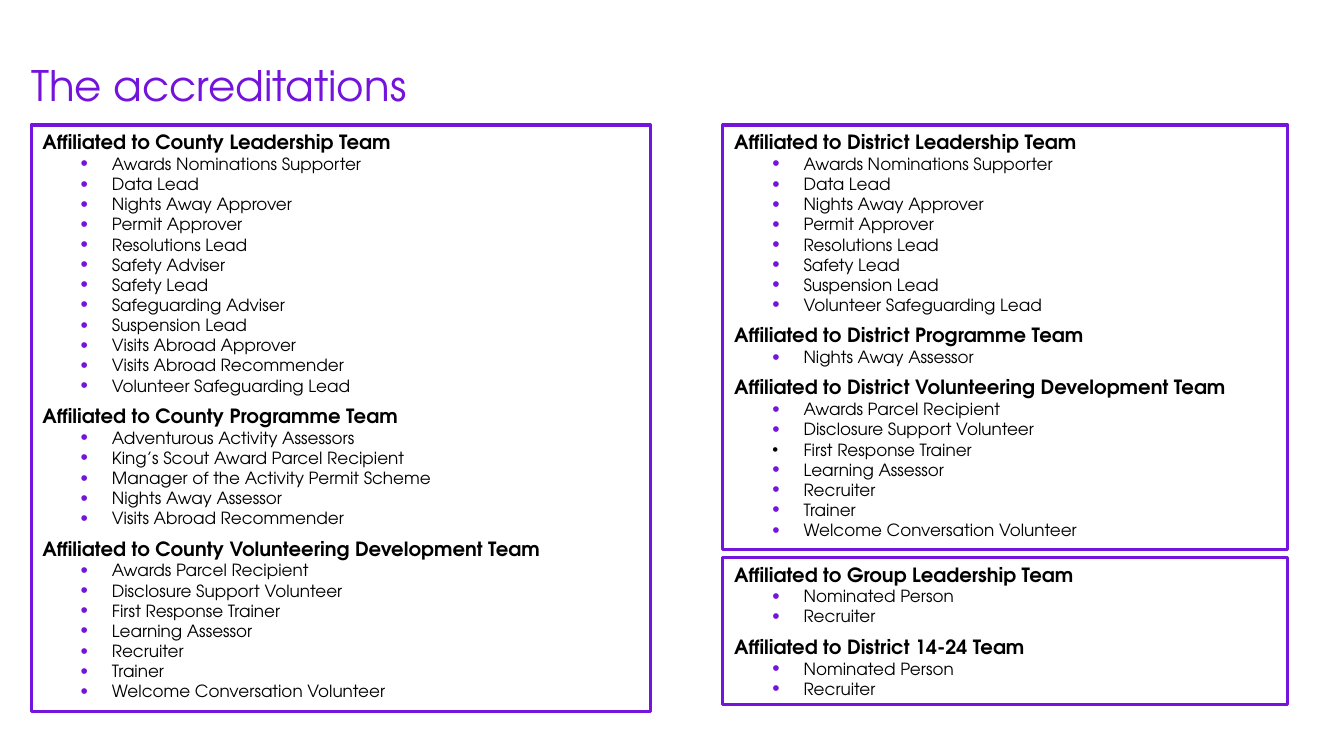
from dataclasses import dataclass

from lxml.etree import SubElement
from pptx import Presentation
from pptx.dml.color import RGBColor
from pptx.enum.text import MSO_ANCHOR, MSO_AUTO_SIZE, PP_ALIGN
from pptx.oxml.ns import qn
from pptx.util import Inches, Pt


@dataclass(frozen=True)
class Theme:
    font: str = "TeX Gyre Adventor"
    title_color: str = "7413DC"
    accent: str = "7414DC"
    text: str = "000000"
    title_size: float = 30
    team_size: float = 14
    role_size: float = 12
    border: float = 2.25
    team_gap: float = 6
    bullet_percent: int = 125


THEME = Theme()
TITLE = "The accreditations"

VOLUNTEERING_ROLES = [
    "Awards Parcel Recipient",
    "Disclosure Support Volunteer",
    "First Response Trainer",
    "Learning Assessor",
    "Recruiter",
    "Trainer",
    "Welcome Conversation Volunteer",
]
GROUP_ROLES = ["Nominated Person", "Recruiter"]

COUNTY = {
    "Affiliated to County Leadership Team": [
        "Awards Nominations Supporter",
        "Data Lead",
        "Nights Away Approver",
        "Permit Approver",
        "Resolutions Lead",
        "Safety Adviser",
        "Safety Lead",
        "Safeguarding Adviser",
        "Suspension Lead",
        "Visits Abroad Approver",
        "Visits Abroad Recommender",
        "Volunteer Safeguarding Lead",
    ],
    "Affiliated to County Programme Team": [
        "Adventurous Activity Assessors",
        "King’s Scout Award Parcel Recipient",
        "Manager of the Activity Permit Scheme",
        "Nights Away Assessor",
        "Visits Abroad Recommender",
    ],
    "Affiliated to County Volunteering Development Team": VOLUNTEERING_ROLES,
}
DISTRICT = {
    "Affiliated to District Leadership Team": [
        "Awards Nominations Supporter",
        "Data Lead",
        "Nights Away Approver",
        "Permit Approver",
        "Resolutions Lead",
        "Safety Lead",
        "Suspension Lead",
        "Volunteer Safeguarding Lead",
    ],
    "Affiliated to District Programme Team": ["Nights Away Assessor"],
    "Affiliated to District Volunteering Development Team": VOLUNTEERING_ROLES,
}
GROUP = {
    "Affiliated to Group Leadership Team": GROUP_ROLES,
    "Affiliated to District 14-24 Team": GROUP_ROLES,
}

LEFT, RIGHT, TOP = 0.31, 7.17, 1.24
PANELS = [
    (COUNTY, (LEFT, TOP, 6.14, 5.82), ()),
    (DISTRICT, (RIGHT, TOP, 5.6, 4.21), ("First Response Trainer",)),
    (GROUP, (RIGHT, 5.53, 5.6, 1.46), ()),
]


def place(box, bounds):
    box.left, box.top, box.width, box.height = map(Inches, bounds)
    frame = box.text_frame
    frame.word_wrap = True
    frame.auto_size = MSO_AUTO_SIZE.NONE
    frame.vertical_anchor = MSO_ANCHOR.TOP
    return frame


def style(paragraph, size, color, bold=False, space_before=0):
    paragraph.alignment = PP_ALIGN.LEFT
    paragraph.space_before = Pt(space_before)
    paragraph.font.name = THEME.font
    paragraph.font.size = Pt(size)
    paragraph.font.bold = bold
    paragraph.font.color.rgb = RGBColor.from_string(color)


def indent(paragraph, margin, first_line):
    properties = paragraph._p.get_or_add_pPr()
    properties.set("marL", str(Inches(margin)))
    properties.set("indent", str(Inches(first_line)))
    return properties


def add_team(paragraph, team, space_before):
    paragraph.text = team
    SubElement(indent(paragraph, 0.01, 0), qn("a:buNone"))
    style(paragraph, THEME.team_size, THEME.text, True, space_before)


def add_role(paragraph, role, plain_bullet):
    paragraph.text = role
    paragraph.level = 1
    properties = indent(paragraph, 0.7, -0.31)
    if not plain_bullet:
        color = SubElement(properties, qn("a:buClr"))
        SubElement(color, qn("a:srgbClr"), val=THEME.accent)
        SubElement(properties, qn("a:buSzPct"), val=str(THEME.bullet_percent * 1000))
    SubElement(properties, qn("a:buFont"), typeface="Arial")
    SubElement(properties, qn("a:buChar"), char="•")
    style(paragraph, THEME.role_size, THEME.text)


def fill_panel(panel, teams, bounds, plain_bullets):
    frame = place(panel, bounds)
    panel.line.color.rgb = RGBColor.from_string(THEME.accent)
    panel.line.width = Pt(THEME.border)
    for position, (team, roles) in enumerate(teams.items()):
        heading = frame.add_paragraph() if position else frame.paragraphs[0]
        add_team(heading, team, THEME.team_gap if position else 0)
        for role in roles:
            add_role(frame.add_paragraph(), role, role in plain_bullets)


def main():
    presentation = Presentation()
    presentation.slide_width = Inches(13.33)
    presentation.slide_height = Inches(7.5)
    comparison = presentation.slide_layouts.get_by_name("Comparison")
    slide = presentation.slides.add_slide(comparison)

    title = slide.shapes.title
    title_frame = place(title, (LEFT, 0.59, 5.76, 0.5))
    title_frame.margin_left = title_frame.margin_right = 0
    title_frame.margin_top = title_frame.margin_bottom = 0
    title_frame.text = TITLE
    style(title_frame.paragraphs[0], THEME.title_size, THEME.title_color)

    bodies = list(slide.placeholders)[1:]
    for body, (teams, bounds, plain_bullets) in zip(bodies, PANELS):
        fill_panel(body, teams, bounds, plain_bullets)
    for unused in bodies[len(PANELS):]:
        unused.element.getparent().remove(unused.element)

    presentation.save("out.pptx")


if __name__ == "__main__":
    main()
